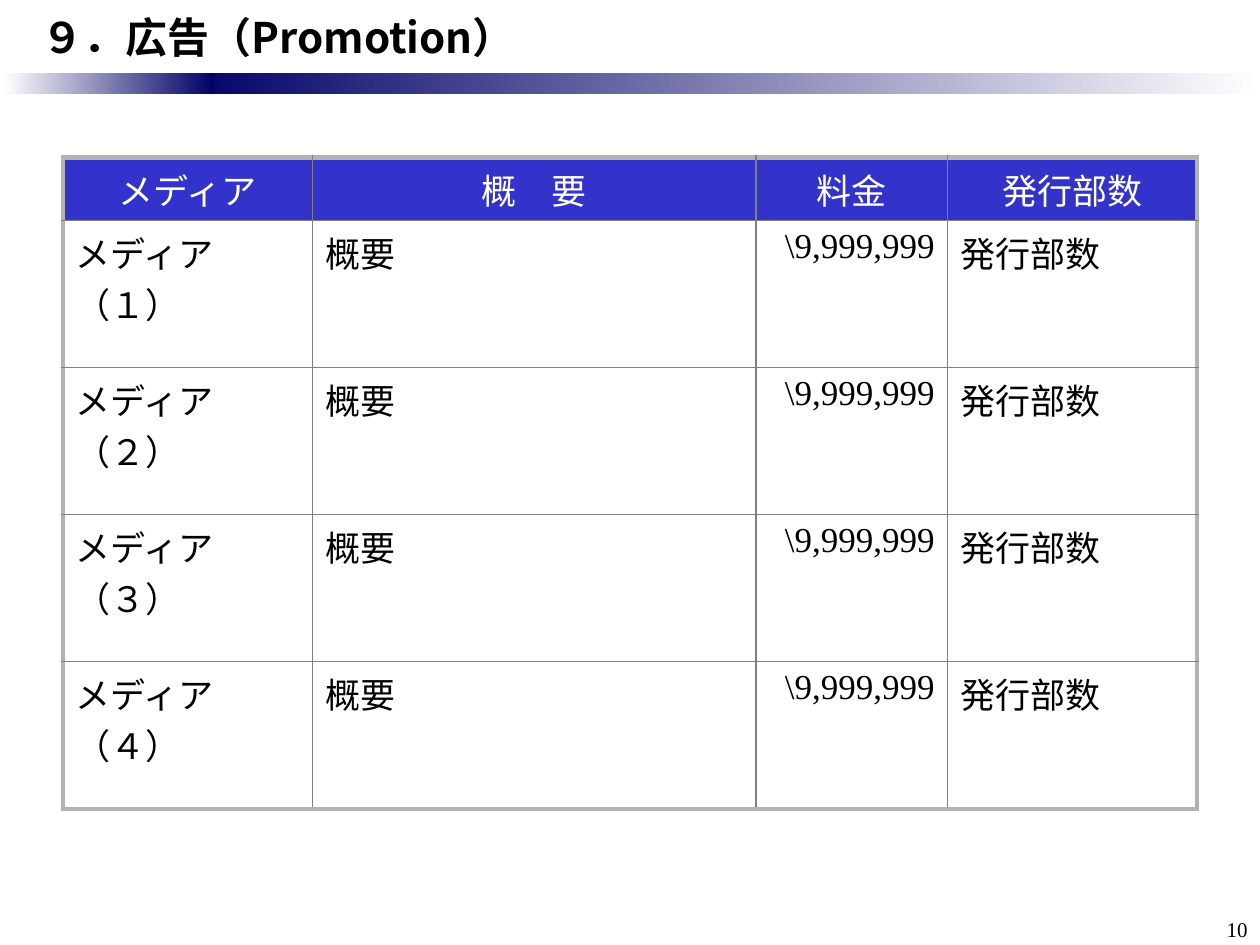
from lxml import etree
from pptx import Presentation, util as u
from pptx.dml.color import RGBColor
from pptx.enum import shapes, text
from pptx.oxml.ns import qn

COLORS = {
    "navy": "000066",
    "white": "FFFFFF",
    "black": "000000",
    "header": "3333CC",
    "frame": "B2B2B2",
    "grid": "808080",
}
GOTHIC = "Noto Sans CJK JP"
SERIF = "Times New Roman"
LEFT, CENTER, RIGHT = text.PP_ALIGN.LEFT, text.PP_ALIGN.CENTER, text.PP_ALIGN.RIGHT

HEADINGS = ["メディア", "概　要", "料金", "発行部数"]
MEDIA_ROWS = [[f"メディア（{number}）", "概要", "\\9,999,999", "発行部数"]
              for number in "１２３４"]
BODY_ALIGNMENT = [LEFT, LEFT, RIGHT, LEFT]
COLUMN_WIDTHS = [1.98, 3.52, 1.52, 1.98]
HEADER_HEIGHT = 0.5


def rgb(name):
    return RGBColor.from_string(COLORS[name])


def inches(*lengths):
    return [u.Inches(length) for length in lengths]


def add_run(paragraph, words, size, font, color="black", bold=False):
    run = paragraph.add_run()
    run.text = words
    run.font.size = u.Pt(size)
    run.font.name = font
    run.font.bold = bold
    run.font.color.rgb = rgb(color)
    # Japanese characters use the gothic face
    etree.SubElement(run.font._element, qn("a:ea"), typeface=GOTHIC)


def add_text_box(slide, box, words, size, font, align=LEFT, left_inset=0.1, bold=False):
    frame = slide.shapes.add_textbox(*inches(*box)).text_frame
    frame.word_wrap = True
    frame.margin_left = u.Inches(left_inset)
    frame.vertical_anchor = text.MSO_ANCHOR.MIDDLE
    paragraph = frame.paragraphs[0]
    paragraph.alignment = align
    add_run(paragraph, words, size, font, bold=bold)


def add_gradient_bar(slide, box, start, end):
    bar = slide.shapes.add_shape(shapes.MSO_SHAPE.RECTANGLE, *inches(*box))
    bar.shadow.inherit = False
    bar.line.fill.background()
    bar.fill.gradient()
    bar.fill.gradient_angle = 0
    for stop, color, position in zip(bar.fill.gradient_stops, (start, end), (0, 1)):
        stop.color.rgb = rgb(color)
        stop.position = position


def add_header(slide, box):
    left, top, width, height = box
    bar_height = 0.17
    title_height = height - bar_height
    bar_top = top + title_height
    # Rule fading out to both sides
    add_gradient_bar(slide, (left + 1.42, bar_top, width - 1.42, bar_height), "navy", "white")
    add_gradient_bar(slide, (left + 0.03, bar_top, 1.67, bar_height), "white", "navy")
    # Title
    add_text_box(slide, (left, top, width, title_height), "９．広告（Promotion）",
                 24, GOTHIC, left_inset=0.33, bold=True)


def set_border(cell, side, color, points):
    line = etree.SubElement(cell._tc.get_or_add_tcPr(), qn(f"a:ln{side}"),
                            w=str(u.Pt(points)))
    fill = etree.SubElement(line, qn("a:solidFill"))
    etree.SubElement(fill, qn("a:srgbClr"), val=COLORS[color])


def fill_cell(cell, words, align, color):
    paragraph = cell.text_frame.paragraphs[0]
    paragraph.alignment = align
    # Space before of 20 % of a line
    spacing = etree.SubElement(paragraph._p.get_or_add_pPr(), qn("a:spcBef"))
    etree.SubElement(spacing, qn("a:spcPct"), val="20000")
    add_run(paragraph, words, 20, SERIF, color)


def add_media_table(slide, box):
    rows = [HEADINGS] + MEDIA_ROWS
    last_row, last_column = len(rows) - 1, len(HEADINGS) - 1
    table = slide.shapes.add_table(len(rows), len(HEADINGS), *inches(*box)).table
    for column, width in zip(table.columns, COLUMN_WIDTHS):
        column.width = u.Inches(width)
    body_height = (box[3] - HEADER_HEIGHT) / last_row

    for r, row in enumerate(rows):
        is_header = r == 0
        table.rows[r].height = u.Inches(HEADER_HEIGHT if is_header else body_height)
        for c, words in enumerate(row):
            cell = table.cell(r, c)
            # Thick frame outside, thin grid inside
            outer = {"L": c == 0, "R": c == last_column, "T": r == 0, "B": r == last_row}
            for side, on_frame in outer.items():
                set_border(cell, side, *(("frame", 3) if on_frame else ("grid", 1)))
            if is_header:
                cell.fill.solid()
                cell.fill.fore_color.rgb = rgb("header")
                fill_cell(cell, words, CENTER, "white")
            else:
                cell.fill.background()
                fill_cell(cell, words, BODY_ALIGNMENT[c], "black")


def main():
    presentation = Presentation()
    presentation.slide_width, presentation.slide_height = inches(10, 7.5)
    slide = presentation.slides.add_slide(presentation.slide_layouts[6])
    add_header(slide, (0, 0, 10, 0.75))
    add_media_table(slide, (0.5, 1.25, 9, 5.17))
    # Page number
    add_text_box(slide, (9.42, 7.25, 0.58, 0.25), "10", 12, SERIF, align=RIGHT)
    presentation.save("out.pptx")


if __name__ == "__main__":
    main()
